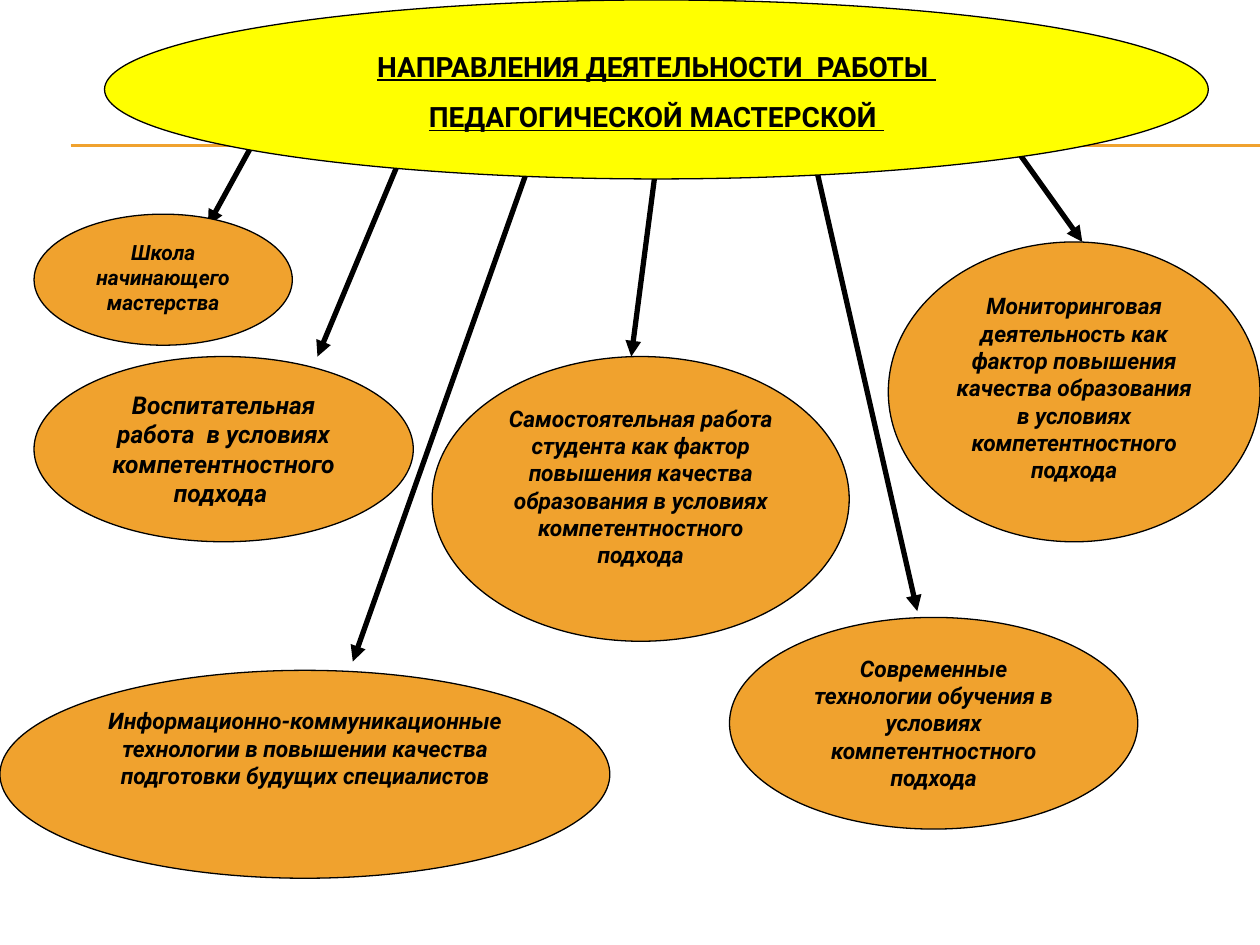
from pptx import Presentation
from pptx.dml.color import RGBColor
from pptx.enum.shapes import MSO_CONNECTOR, MSO_SHAPE
from pptx.enum.text import MSO_ANCHOR, PP_ALIGN
from pptx.oxml.ns import qn
from pptx.util import Inches, Pt
from lxml.etree import SubElement

BLACK = RGBColor(0x00, 0x00, 0x00)
YELLOW = RGBColor(0xFF, 0xFF, 0x00)
ORANGE = RGBColor(0xF0, 0xA2, 0x2E)
FONT = "Roboto"

TITLE_BOX = (0.83, 0, 8.76, 1.42)
TITLE = ["НАПРАВЛЕНИЯ ДЕЯТЕЛЬНОСТИ  РАБОТЫ ", "ПЕДАГОГИЧЕСКОЙ МАСТЕРСКОЙ "]

# Start and end of each arrow from the title to a direction
ARROWS = [
    ((2.09, 0.99), (1.65, 1.79)),
    ((3.28, 1.01), (2.52, 2.83)),
    ((4.26, 1.14), (2.8, 5.25)),
    ((5.23, 1.14), (5.01, 2.83)),
    ((6.42, 1.08), (7.28, 4.85)),
    ((7.94, 1.01), (8.59, 1.92)),
]

# Box, font size, text
DIRECTIONS = [
    ((7.05, 1.92, 2.95, 2.38), 13,
     "Мониторинговая деятельность как фактор повышения качества образования "
     "в условиях компетентностного подхода"),
    ((5.79, 4.9, 3.24, 1.68), 13,
     "Современные технологии обучения в условиях компетентностного подхода"),
    ((0.27, 1.7, 2.05, 1.04), 12, "Школа начинающего мастерства"),
    ((3.43, 2.83, 3.31, 2.26), 13,
     "Самостоятельная работа студента как фактор повышения качества "
     "образования в условиях компетентностного подхода"),
    ((0.27, 2.83, 3.01, 1.47), 14,
     "Воспитательная работа  в условиях компетентностного подхода "),
    ((0, 5.32, 4.84, 1.65), 13,
     "Информационно-коммуникационные технологии в повышении качества "
     "подготовки будущих специалистов"),
]


def add_line(slide, start, end, color, width):
    points = [Inches(v) for v in (*start, *end)]
    line = slide.shapes.add_connector(MSO_CONNECTOR.STRAIGHT, *points)
    line.line.color.rgb = color
    line.line.width = Pt(width)
    SubElement(line._element.spPr, qn("a:effectLst"))
    return line


def add_arrow(slide, start, end):
    arrow = add_line(slide, start, end, BLACK, 3)
    SubElement(arrow.line._get_or_add_ln(), qn("a:tailEnd"), type="triangle")


def add_oval(slide, box, fill, paragraphs, size):
    """Add an outlined ellipse with bold centred text and return its paragraphs."""
    sp = slide.shapes.add_shape(MSO_SHAPE.OVAL, *[Inches(v) for v in box])
    sp.shadow.inherit = False
    sp.fill.solid()
    sp.fill.fore_color.rgb = fill
    sp.line.color.rgb = BLACK
    sp.line.width = Pt(0.75)
    tf = sp.text_frame
    tf.word_wrap = True
    tf.vertical_anchor = MSO_ANCHOR.TOP
    tf.text = "\n".join(paragraphs)
    for p in tf.paragraphs:
        p.alignment = PP_ALIGN.CENTER
        p.font.name = FONT
        p.font.size = Pt(size)
        p.font.bold = True
        p.font.color.rgb = BLACK
    return tf.paragraphs


def add_title(slide, box):
    for p in add_oval(slide, box, YELLOW, TITLE, 16):
        p.line_spacing = 1.5
        p.font.underline = True


def add_direction(slide, box, size, text):
    for p in add_oval(slide, box, ORANGE, [text], size):
        p.font.italic = True


def main():
    prs = Presentation()
    prs.slide_width, prs.slide_height = Inches(10), Inches(7.5)
    slide = prs.slides.add_slide(prs.slide_layouts[6])
    for y in (1.15, 1.16):
        add_line(slide, (0.56, y), (10, y), ORANGE, 0.75)
    for start, end in ARROWS:
        add_arrow(slide, start, end)
    add_title(slide, TITLE_BOX)
    for box, size, text in DIRECTIONS:
        add_direction(slide, box, size, text)
    prs.save("out.pptx")


if __name__ == "__main__":
    main()
